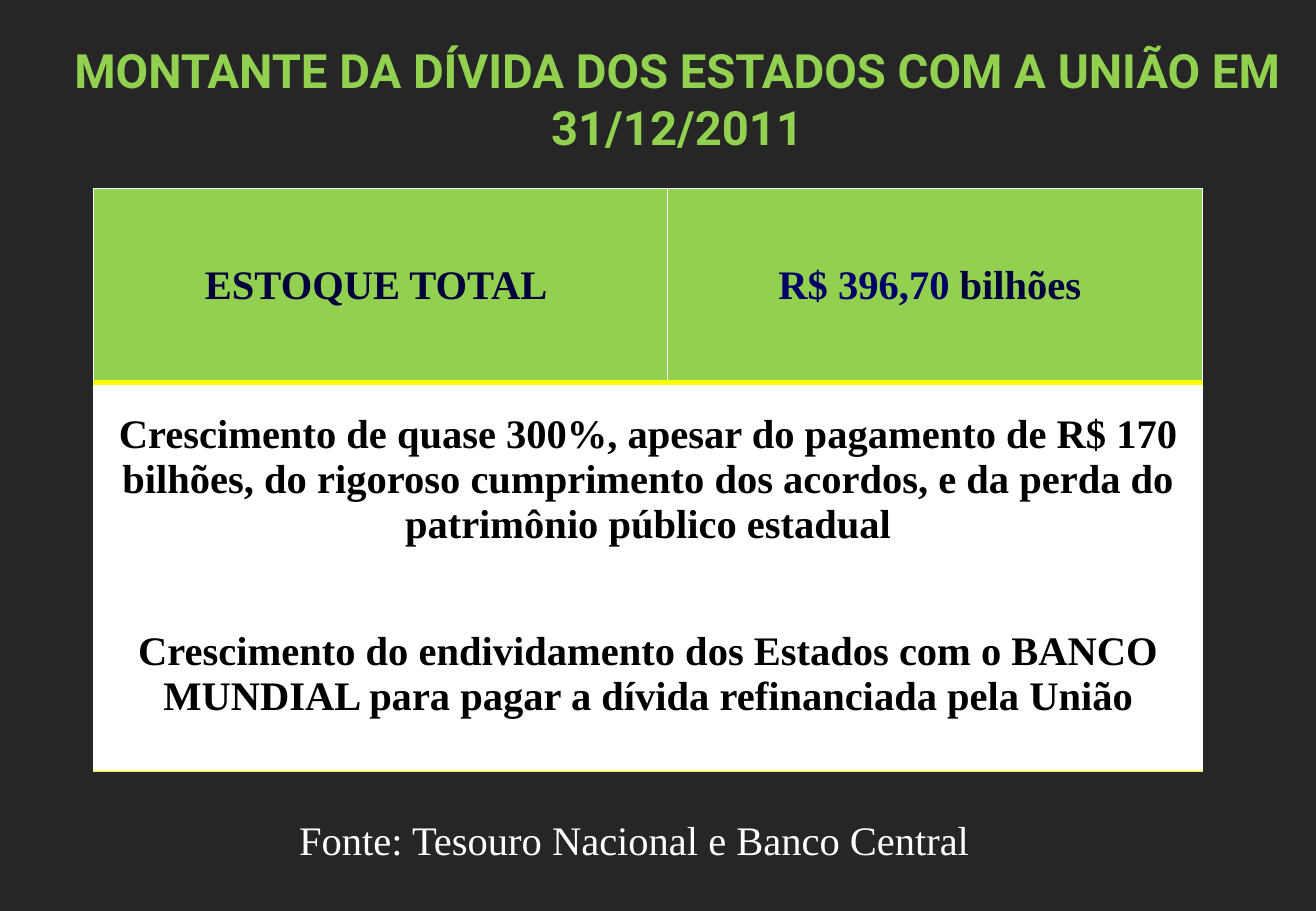
import lxml.etree
import pptx
import pptx.dml.color
import pptx.enum.text
import pptx.oxml.ns
import pptx.util

WIDTH = pptx.util.Inches(10.83)
HEIGHT = pptx.util.Inches(7.5)
CHARCOAL = pptx.dml.color.RGBColor(0x26, 0x26, 0x26)
GREEN = pptx.dml.color.RGBColor(0x92, 0xD0, 0x50)
WHITE = pptx.dml.color.RGBColor(0xFF, 0xFF, 0xFF)
BLACK = pptx.dml.color.RGBColor(0x00, 0x00, 0x00)
NAVY = pptx.dml.color.RGBColor(0x00, 0x00, 0x3D)
BLUE = pptx.dml.color.RGBColor(0x00, 0x00, 0x66)
YELLOW = pptx.dml.color.RGBColor(0xFF, 0xFF, 0x00)
SERIF = "Times New Roman"
SANS = "Roboto"


def place(left, top, width, height):
    return (round(left * WIDTH), round(top * HEIGHT),
            round(width * WIDTH), round(height * HEIGHT))


def write(frame, spans, size, font, bold):
    para = frame.paragraphs[0]
    para.alignment = pptx.enum.text.PP_ALIGN.CENTER
    for text, color in spans:
        span = para.add_run()
        span.text = text
        span.font.size = pptx.util.Pt(size)
        span.font.name = font
        span.font.bold = bold
        span.font.color.rgb = color


def add_text(page, area, text, color, size, font, bold):
    box = page.shapes.add_textbox(*place(*area))
    box.text_frame.word_wrap = True
    write(box.text_frame, [(text, color)], size, font, bold)


def set_borders(cell, edge_color, bottom_points):
    properties = cell._tc.get_or_add_tcPr()
    edges = [("a:lnL", edge_color, 0.5), ("a:lnR", edge_color, 0.5),
             ("a:lnT", edge_color, 0.5), ("a:lnB", YELLOW, bottom_points)]
    for index, (tag, color, points) in enumerate(edges):
        line = lxml.etree.Element(pptx.oxml.ns.qn(tag), w=str(pptx.util.Pt(points)))
        fill = lxml.etree.SubElement(line, pptx.oxml.ns.qn("a:solidFill"))
        lxml.etree.SubElement(fill, pptx.oxml.ns.qn("a:srgbClr"), val=str(color))
        properties.insert(index, line)
    if edge_color == WHITE and bottom_points == 1:
        top = properties.find(pptx.oxml.ns.qn("a:lnT"))
        properties.remove(top)


def fill_cell(cell, spans, color):
    cell.fill.solid()
    cell.fill.fore_color.rgb = color
    cell.vertical_anchor = pptx.enum.text.MSO_ANCHOR.MIDDLE
    write(cell.text_frame, spans, 24, SERIF, True)


def add_debt_table(page, area, shares, header, statements):
    rows = len(statements) + 1
    table = page.shapes.add_table(rows, len(shares), *place(*area)).table
    for column, share in zip(table.columns, shares):
        column.width = round(area[2] * WIDTH * share)
    for column, spans in enumerate(header):
        fill_cell(table.cell(0, column), spans, GREEN)
        set_borders(table.cell(0, column), WHITE, 3)
    for row, statement in enumerate(statements, 1):
        table.cell(row, 0).merge(table.cell(row, len(shares) - 1))
        fill_cell(table.cell(row, 0), [(statement, BLACK)], WHITE)
        for column in range(len(shares)):
            set_borders(table.cell(row, column), WHITE, 1)


def main():
    deck = pptx.Presentation()
    deck.slide_width, deck.slide_height = WIDTH, HEIGHT
    page = deck.slides.add_slide(deck.slide_layouts[6])
    page.background.fill.solid()
    page.background.fill.fore_color.rgb = CHARCOAL

    add_debt_table(
        page, (0.071, 0.2067, 0.843, 0.64), (0.517, 0.483),
        [[("ESTOQUE TOTAL ", NAVY)],
         [("R$ 396,70 ", BLUE), ("bilhões ", NAVY)]],
        ["Crescimento de quase 300%, apesar do pagamento de R$ 170 bilhões, "
         "do rigoroso cumprimento dos acordos, e da perda do patrimônio "
         "público estadual",
         "Crescimento do endividamento dos Estados com o BANCO MUNDIAL "
         "para pagar a dívida refinanciada pela União"])
    add_text(page, (0.028, 0.039, 0.973, 0.139),
             "MONTANTE DA DÍVIDA DOS ESTADOS COM A UNIÃO EM 31/12/2011",
             GREEN, 28, SANS, True)
    add_text(page, (0.1, 0.888, 0.764, 0.067),
             "Fonte: Tesouro Nacional e Banco Central",
             WHITE, 24, SERIF, False)
    deck.save("out.pptx")


if __name__ == "__main__":
    main()
